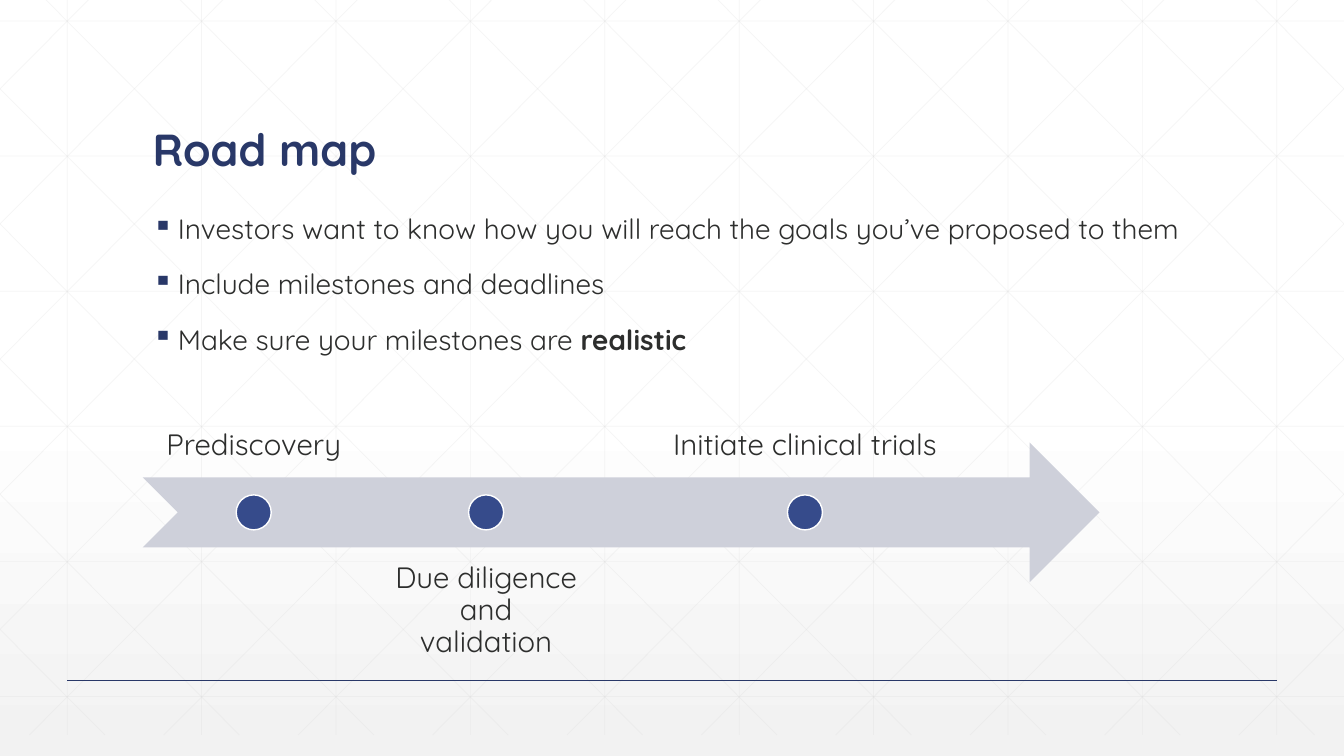
from dataclasses import dataclass

from lxml import etree
from pptx import Presentation
from pptx.dml.color import RGBColor
from pptx.enum.shapes import MSO_CONNECTOR, MSO_SHAPE
from pptx.enum.text import MSO_ANCHOR, PP_ALIGN
from pptx.oxml.ns import qn
from pptx.shapes.autoshape import Shape
from pptx.slide import Slide
from pptx.text.text import TextFrame
from pptx.util import Pt

STRAIGHT = MSO_CONNECTOR.STRAIGHT
ARROW, DOT = MSO_SHAPE.NOTCHED_RIGHT_ARROW, MSO_SHAPE.OVAL
TOP, BOTTOM = MSO_ANCHOR.TOP, MSO_ANCHOR.BOTTOM
CENTER = PP_ALIGN.CENTER

FONT = "Quicksand"
COLORS = {
    "white": "FFFFFF",
    "shade": "F2F2F2",
    "grid": "D9D9D9",
    "navy": "293868",
    "text": "2D2E2D",
    "arrow": "CED0DA",
    "dot": "364B8B",
}

# Lengths in points
WIDTH, HEIGHT = 960, 540
MARGIN = 102
CONTENT_WIDTH = 756
GRID_TOP, GRID_BOTTOM = -15, 525
DIAGONAL_RUN = 537
ARROW_TOP, ARROW_WIDTH, ARROW_HEIGHT = 316, 683.5, 100
LABEL_SHIFT, LABEL_GAP, LABEL_INSET = 75, 7.5, 11.5
DOT_SIZE = 25


@dataclass(frozen=True)
class Milestone:
    label: str
    width: float
    above: bool


MILESTONES = [
    Milestone("Prediscovery", 158.5, True),
    Milestone("Due diligence and validation", 158.5, False),
    Milestone("Initiate clinical trials", 282, True),
]

# Each bullet is a plain part and a bold part
BULLETS = [
    ("Investors want to know how you will reach the goals you’ve proposed to them", ""),
    ("Include milestones and deadlines", ""),
    ("Make sure your milestones are ", "realistic"),
]


def rgb(name: str) -> RGBColor:
    return RGBColor.from_string(COLORS[name])


def add_opacity(color_element: etree._Element, percent: int) -> None:
    etree.SubElement(color_element, qn("a:alpha"), val=str(percent * 1000))


def set_background(slide: Slide) -> None:
    fill = slide.background.fill
    fill.gradient()
    fill.gradient_angle = 270
    stops = slide.element.find(".//" + qn("a:gsLst"))
    for stop in list(stops):
        stops.remove(stop)
    for position, name, opacity in [(0, "white", 100), (53, "white", 100), (100, "shade", 65)]:
        stop = etree.SubElement(stops, qn("a:gs"), pos=str(position * 1000))
        color = etree.SubElement(stop, qn("a:srgbClr"), val=COLORS[name])
        if opacity < 100:
            add_opacity(color, opacity)


def add_line(slide: Slide, x1: float, y1: float, x2: float, y2: float,
             color: str = "grid", width: float = 0.5, opacity: int = 25) -> None:
    connector = slide.shapes.add_connector(STRAIGHT, Pt(x1), Pt(y1), Pt(x2), Pt(y2))
    connector.line.color.rgb = rgb(color)
    connector.line.width = Pt(width)
    properties = connector.element.spPr
    if opacity < 100:
        add_opacity(properties.find(".//" + qn("a:srgbClr")), opacity)
    etree.SubElement(properties, qn("a:effectLst"))


def add_grid(slide: Slide) -> None:
    for column in range(10):
        x = 48 + 96 * column
        add_line(slide, x, GRID_TOP, x, GRID_BOTTOM)
    for row in range(6):
        y = 15 + 96.5 * row
        add_line(slide, 0, y, WIDTH, y)
    # Diagonals end at the slide's sides; each has a mirrored twin
    slope = (GRID_BOTTOM - GRID_TOP) / DIAGONAL_RUN
    for step in range(-5, 10):
        x = 18 + 96 * step
        start, end = max(x, 0), min(x + DIAGONAL_RUN, WIDTH)
        start_y, end_y = (GRID_TOP + (edge - x) * slope for edge in (start, end))
        add_line(slide, start, start_y, end, end_y)
        add_line(slide, WIDTH - start, start_y, WIDTH - end, end_y)


def add_text_frame(slide: Slide, left: float, top: float, width: float, height: float,
                   anchor: MSO_ANCHOR = TOP) -> TextFrame:
    box = slide.shapes.add_textbox(Pt(left), Pt(top), Pt(width), Pt(height))
    frame = box.text_frame
    frame.word_wrap = True
    frame.vertical_anchor = anchor
    return frame


def style_paragraph(paragraph, size: float, color: str = "text") -> None:
    paragraph.line_spacing = 0.9
    paragraph.font.name = FONT
    paragraph.font.size = Pt(size)
    paragraph.font.color.rgb = rgb(color)


def add_title(slide: Slide) -> None:
    frame = add_text_frame(slide, MARGIN, 39.5, CONTENT_WIDTH, 90, BOTTOM)
    paragraph = frame.paragraphs[0]
    paragraph.text = "Road map"
    style_paragraph(paragraph, 32, "navy")
    paragraph.font.bold = True


def add_bullets(slide: Slide) -> None:
    frame = add_text_frame(slide, MARGIN, 150, CONTENT_WIDTH, 300)
    for index, (plain, bold) in enumerate(BULLETS):
        paragraph = frame.add_paragraph() if index else frame.paragraphs[0]
        if index:
            paragraph.space_before = Pt(18)
        paragraph.line_spacing = 0.9
        properties = paragraph._p.get_or_add_pPr()
        properties.set("marL", str(Pt(18)))
        properties.set("indent", str(-Pt(18)))
        bullet_color = etree.SubElement(properties, qn("a:buClr"))
        etree.SubElement(bullet_color, qn("a:srgbClr"), val=COLORS["navy"])
        etree.SubElement(properties, qn("a:buChar"), char="▪")
        paragraph.add_run().text = plain
        if bold:
            run = paragraph.add_run()
            run.text = bold
            run.font.bold = True
        style_paragraph(paragraph, 20)


def add_filled_shape(slide: Slide, kind: MSO_SHAPE, left: float, top: float,
                     width: float, height: float, color: str) -> Shape:
    shape = slide.shapes.add_shape(kind, Pt(left), Pt(top), Pt(width), Pt(height))
    shape.shadow.inherit = False
    shape.fill.solid()
    shape.fill.fore_color.rgb = rgb(color)
    shape.line.fill.background()
    return shape


def add_milestone(slide: Slide, milestone: Milestone, left: float) -> None:
    shift = -LABEL_SHIFT if milestone.above else LABEL_SHIFT
    frame = add_text_frame(slide, left, ARROW_TOP + shift, milestone.width, ARROW_HEIGHT,
                           BOTTOM if milestone.above else TOP)
    frame.margin_left = frame.margin_right = Pt(LABEL_INSET)
    frame.margin_top = frame.margin_bottom = Pt(LABEL_INSET)
    paragraph = frame.paragraphs[0]
    paragraph.text = milestone.label
    paragraph.alignment = CENTER
    style_paragraph(paragraph, 21)

    dot = add_filled_shape(slide, DOT, left + (milestone.width - DOT_SIZE) / 2,
                           ARROW_TOP + (ARROW_HEIGHT - DOT_SIZE) / 2, DOT_SIZE, DOT_SIZE, "dot")
    dot.line.color.rgb = rgb("white")
    dot.line.width = Pt(1)


def main() -> None:
    presentation = Presentation()
    presentation.slide_width, presentation.slide_height = Pt(WIDTH), Pt(HEIGHT)
    slide = presentation.slides.add_slide(presentation.slide_layouts[6])

    # Backdrop
    set_background(slide)
    add_grid(slide)
    add_line(slide, 48, 486, 912, 486, "navy", 1, 100)

    # Text
    add_title(slide)
    add_bullets(slide)

    # Timeline
    add_filled_shape(slide, ARROW, MARGIN, ARROW_TOP, ARROW_WIDTH, ARROW_HEIGHT, "arrow")
    left = MARGIN
    for milestone in MILESTONES:
        add_milestone(slide, milestone, left)
        left += milestone.width + LABEL_GAP

    presentation.save("out.pptx")


if __name__ == "__main__":
    main()
